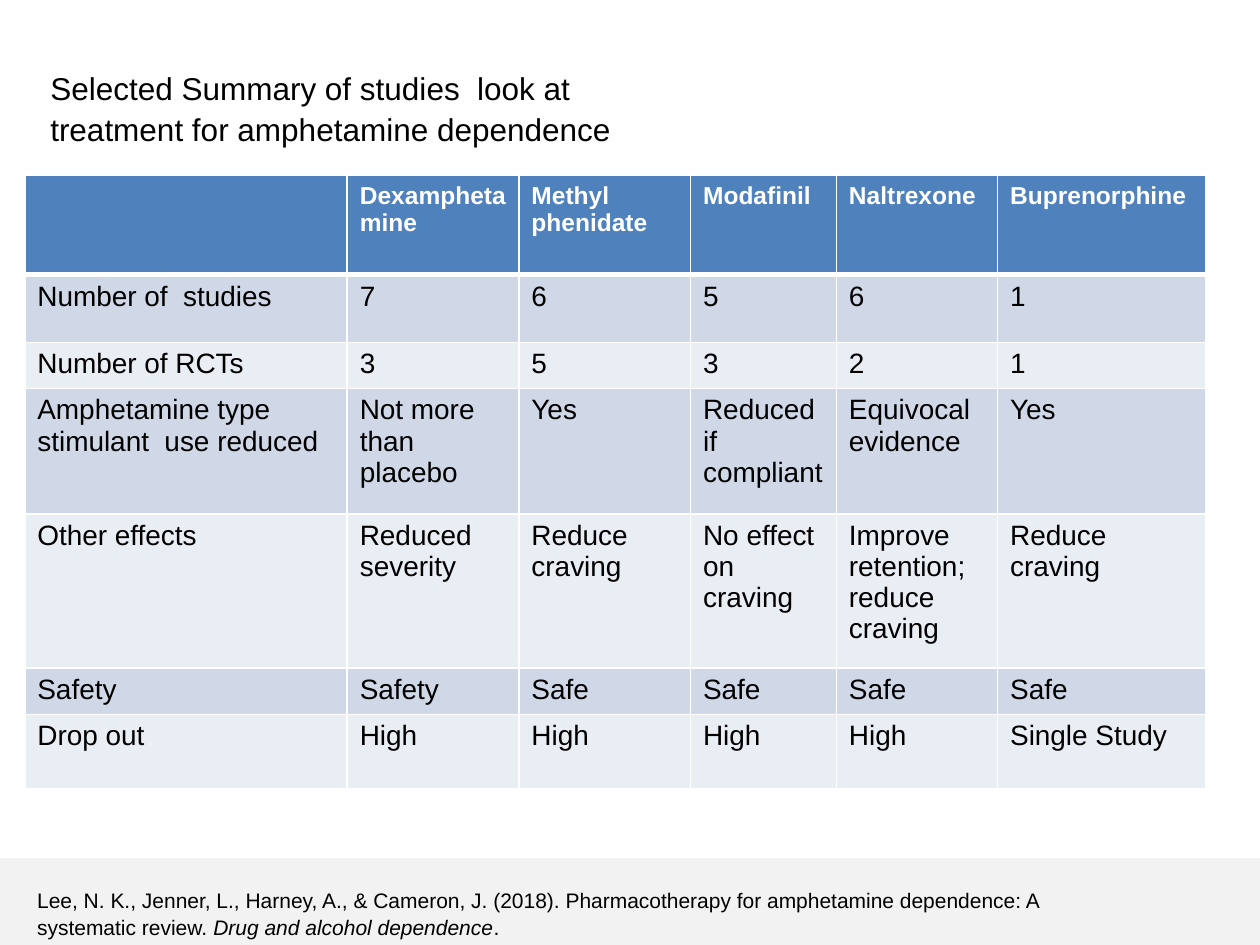
from lxml import etree
from pptx import Presentation
from pptx.dml.color import RGBColor
from pptx.enum.shapes import MSO_SHAPE
from pptx.enum.text import MSO_ANCHOR, MSO_AUTO_SIZE, PP_ALIGN
from pptx.oxml import parse_xml
from pptx.oxml.ns import nsdecls
from pptx.util import Cm, Pt

RECT = MSO_SHAPE.RECTANGLE
TOP = MSO_ANCHOR.TOP
LEFT = PP_ALIGN.LEFT
NO_FIT = MSO_AUTO_SIZE.NONE

BLACK = RGBColor(0x00, 0x00, 0x00)
WHITE = RGBColor(0xFF, 0xFF, 0xFF)
HEADER_BLUE = RGBColor(0x4F, 0x81, 0xBD)
BAND_DARK = RGBColor(0xD0, 0xD8, 0xE8)
BAND_LIGHT = RGBColor(0xE9, 0xED, 0xF4)
FOOTER_GREY = RGBColor(0xF2, 0xF2, 0xF2)

TITLE = "Selected Summary of studies  look at treatment for amphetamine dependence"
CITATION = [
    ("Lee, N. K., Jenner, L., Harney, A., & Cameron, J. (2018). Pharmacotherapy "
     "for amphetamine dependence: A systematic review. ", False),
    ("Drug and alcohol dependence", True),
    (".", False),
]
COL_WIDTHS = [6.5, 3.46, 3.46, 2.94, 3.25, 4.19]
ROW_HEIGHTS = [2.0, 1.36, 0.93, 2.53, 3.11, 0.93, 1.5]
STUDIES = [
    ["", "Dexamphetamine", "Methyl phenidate", "Modafinil", "Naltrexone",
     "Buprenorphine"],
    ["Number of  studies", "7", "6", "5", "6", "1"],
    ["Number of RCTs", "3", "5", "3", "2", "1"],
    ["Amphetamine type stimulant  use reduced", "Not more than placebo", "Yes",
     "Reduced\nif compliant", "Equivocal  evidence", "Yes"],
    ["Other effects", "Reduced severity", "Reduce craving",
     "No effect on craving", "Improve retention; reduce craving",
     "Reduce craving"],
    ["Safety", "Safety", "Safe", "Safe", "Safe", "Safe"],
    ["Drop out", "High", "High", "High", "High", "Single Study"],
]


class Deck:
    font = "Arial"
    line_spacing = 1.07

    def __init__(self):
        self.prs = Presentation()
        self.prs.slide_width, self.prs.slide_height = Cm(25.4), Cm(19.05)
        self.s = self.prs.slides.add_slide(self.prs.slide_layouts[5])

    def style(self, p, size, color=BLACK, bold=False):
        p.font.name = self.font
        p.font.size = Pt(size)
        p.font.color.rgb = color
        p.font.bold = bold

    def title(self, text, x, y, w, h):
        sp = self.s.shapes.title
        sp.left, sp.top, sp.width, sp.height = Cm(x), Cm(y), Cm(w), Cm(h)
        tf = sp.text_frame
        tf.text = text
        tf.word_wrap = True
        tf.auto_size = NO_FIT
        tf.vertical_anchor = TOP
        p = tf.paragraphs[0]
        p.alignment = LEFT
        p.line_spacing = self.line_spacing
        self.style(p, 18)

    def band(self, color, x, y, w, h):
        sp = self.s.shapes.add_shape(RECT, Cm(x), Cm(y), Cm(w), Cm(h))
        sp.shadow.inherit = False
        sp.fill.solid()
        sp.fill.fore_color.rgb = color
        sp.line.fill.background()

    def text(self, runs, x, y, w, h, size):
        """Add one paragraph made of (text, italic) runs."""
        tf = self.s.shapes.add_textbox(Cm(x), Cm(y), Cm(w), Cm(h)).text_frame
        tf.word_wrap = True
        p = tf.paragraphs[0]
        p.line_spacing = self.line_spacing
        self.style(p, size)
        for words, italic in runs:
            r = p.add_run()
            r.text = words
            r.font.italic = italic

    def borders(self, cell, top, bottom):
        """Draw white cell borders; top and bottom are widths in points."""
        tcPr = cell._tc.get_or_add_tcPr()
        widths = {"lnL": 1, "lnR": 1, "lnT": top, "lnB": bottom}
        for i, (tag, width) in enumerate(widths.items()):
            ln = parse_xml(f'<a:{tag} {nsdecls("a")} w="{Pt(width)}"/>')
            ns = ln.nsmap["a"]
            fill = etree.SubElement(ln, f"{{{ns}}}solidFill")
            etree.SubElement(fill, f"{{{ns}}}srgbClr", val=str(WHITE))
            tcPr.insert(i, ln)

    def table(self, rows, widths, heights, x, y):
        table = self.s.shapes.add_table(
            len(rows), len(widths), Cm(x), Cm(y),
            Cm(sum(widths)), Cm(sum(heights))).table
        for col, width in zip(table.columns, widths):
            col.width = Cm(width)
        for i, (row, height) in enumerate(zip(rows, heights)):
            table.rows[i].height = Cm(height)
            header = i == 0
            fill = HEADER_BLUE if header else BAND_DARK if i % 2 else BAND_LIGHT
            for j, words in enumerate(row):
                cell = table.cell(i, j)
                cell.text = words
                cell.fill.solid()
                cell.fill.fore_color.rgb = fill
                self.borders(cell, 3 if i == 1 else 1, 3 if header else 1)
                for p in cell.text_frame.paragraphs:
                    if header:
                        self.style(p, 14, WHITE, bold=True)
                    else:
                        self.style(p, 16)


def main():
    deck = Deck()
    deck.band(FOOTER_GREY, 0, 17.3, 25.4, 1.75)
    deck.table(STUDIES, COL_WIDTHS, ROW_HEIGHTS, 0.5, 3.54)
    deck.text(CITATION, 0.5, 17.73, 21.34, 1.3, 12)
    deck.title(TITLE, 0.76, 1.22, 12.8, 1.8)
    deck.prs.save("out.pptx")


if __name__ == "__main__":
    main()
